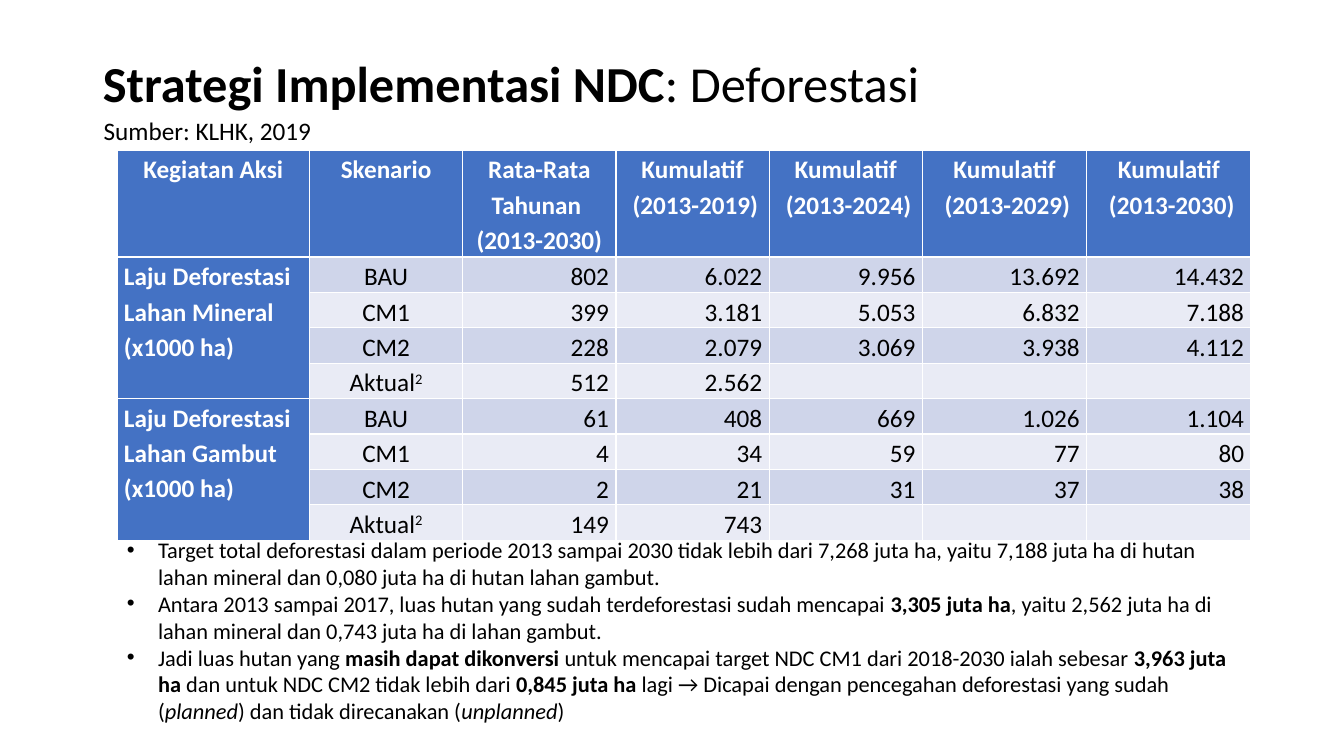
"""Build the slide on deforestation targets of the NDC strategy."""
from dataclasses import dataclass

from lxml.etree import SubElement
from pptx import Presentation
from pptx.dml.color import RGBColor as Rgb
from pptx.enum.text import MSO_ANCHOR as Anchor, MSO_AUTO_SIZE as Fit, PP_ALIGN as Align
from pptx.oxml.ns import qn
from pptx.util import Inches, Pt

FONT = "Calibri"
BLACK = Rgb(0x00, 0x00, 0x00)
WHITE = Rgb(0xFF, 0xFF, 0xFF)
BLUE = Rgb(0x44, 0x72, 0xC4)
DARK = Rgb(0xCF, 0xD5, 0xEA)
LIGHT = Rgb(0xE9, 0xEB, 0xF5)


@dataclass(frozen=True)
class Span:
    text: str
    bold: bool = False
    ital: bool = False
    sup: bool = False


@dataclass(frozen=True)
class Group:
    name: str
    rows: tuple[tuple[str, ...], ...]


WIDTHS = (1.91, 1.52, 1.52, 1.52, 1.52, 1.63, 1.63)
HEAD_H, ROW_H = 1.06, 0.35
CASES = (
    (Span("BAU"),),
    (Span("CM1"),),
    (Span("CM2"),),
    (Span("Aktual"), Span("2", sup=True)),
)
HEADS = ("Kegiatan Aksi", "Skenario", "Rata-Rata Tahunan \v(2013-2030)") + tuple(
    f"Kumulatif\v (2013-{year})" for year in (2019, 2024, 2029, 2030)
)
GROUPS = (
    Group("Laju Deforestasi Lahan Mineral (x1000 ha)", (
        ("802", "6.022", "9.956", "13.692", "14.432"),
        ("399", "3.181", "5.053", "6.832", "7.188"),
        ("228", "2.079", "3.069", "3.938", "4.112"),
        ("512", "2.562", "", "", ""),
    )),
    Group("Laju Deforestasi Lahan Gambut (x1000 ha)", (
        ("61", "408", "669", "1.026", "1.104"),
        ("4", "34", "59", "77", "80"),
        ("2", "21", "31", "37", "38"),
        ("149", "743", "", "", ""),
    )),
)
TITLE = (Span("Strategi Implementasi NDC", bold=True), Span(": Deforestasi"))
NOTES = (
    (
        Span("Target total deforestasi dalam periode 2013 sampai 2030 tidak lebih dari 7,268 juta ha, "
             "yaitu 7,188 juta ha di hutan lahan mineral dan 0,080 juta ha di hutan lahan gambut."),
    ),
    (
        Span("Antara 2013 sampai 2017, luas hutan yang sudah terdeforestasi sudah mencapai "),
        Span("3,305 juta ha", bold=True),
        Span(", yaitu 2,562 juta ha di lahan mineral dan 0,743 juta ha di lahan gambut."),
    ),
    (
        Span("Jadi luas hutan yang "),
        Span("masih dapat dikonversi", bold=True),
        Span(" untuk mencapai target NDC CM1 dari 2018-2030 ialah sebesar "),
        Span("3,963 juta ha ", bold=True),
        Span("dan untuk NDC CM2 tidak lebih dari "),
        Span("0,845 juta ha", bold=True),
        Span(" lagi → Dicapai dengan pencegahan deforestasi yang sudah ("),
        Span("planned", ital=True),
        Span(") dan tidak direcanakan ("),
        Span("unplanned", ital=True),
        Span(")"),
    ),
)


def style(para, size: float, color: Rgb = BLACK, bold: bool = False) -> None:
    """Set the shared font of a paragraph."""
    font = para.font
    font.name, font.size, font.bold = FONT, Pt(size), bold
    font.color.rgb = color


def write(para, spans: tuple[Span, ...]) -> None:
    """Add one run for each span."""
    for span in spans:
        run = para.add_run()
        run.text = span.text
        if span.bold:
            run.font.bold = True
        if span.ital:
            run.font.italic = True
        if span.sup:
            run.font._element.set("baseline", "30000")


def place(shape, left: float, top: float, width: float, height: float) -> None:
    """Move and size a shape."""
    shape.left, shape.top = Inches(left), Inches(top)
    shape.width, shape.height = Inches(width), Inches(height)


def fill(cell, spans: tuple[Span, ...], back: Rgb, align: Align,
         color: Rgb = BLACK, bold: bool = False) -> None:
    """Write and format a table cell."""
    cell.fill.solid()
    cell.fill.fore_color.rgb = back
    cell.margin_left = cell.margin_right = Inches(0.07)
    cell.margin_top = cell.margin_bottom = 0
    para = cell.text_frame.paragraphs[0]
    para.alignment, para.line_spacing = align, 1.15
    style(para, 18, color, bold)
    write(para, spans)


def add_title(slide) -> None:
    """Format the title placeholder."""
    title = slide.shapes.title
    place(title, 0.92, 0.4, 11.5, 0.92)
    frame = title.text_frame
    frame.vertical_anchor, frame.word_wrap = Anchor.MIDDLE, True
    para = frame.paragraphs[0]
    para.alignment, para.line_spacing = Align.LEFT, 0.9
    style(para, 36)
    write(para, TITLE)


def add_rates(slide) -> None:
    """Draw the table of deforestation rates."""
    count = 1 + len(GROUPS) * len(CASES)
    table = slide.shapes.add_table(
        count, len(WIDTHS), Inches(1.16), Inches(1.49),
        Inches(sum(WIDTHS)), Inches(HEAD_H + ROW_H * (count - 1))).table
    for col, width in zip(table.columns, WIDTHS):
        col.width = Inches(width)
    for num, row in enumerate(table.rows):
        row.height = Inches(ROW_H if num else HEAD_H)
    for col, head in enumerate(HEADS):
        cell = table.cell(0, col)
        fill(cell, (), BLUE, Align.CENTER, WHITE, True)
        cell.text_frame.paragraphs[0].text = head
    for index, group in enumerate(GROUPS):
        top = 1 + index * len(CASES)
        name = table.cell(top, 0)
        name.merge(table.cell(top + len(CASES) - 1, 0))
        fill(name, (Span(group.name),), BLUE, Align.LEFT, WHITE, True)
        for num, (case, rates) in enumerate(zip(CASES, group.rows)):
            back = LIGHT if num % 2 else DARK
            fill(table.cell(top + num, 1), case, back, Align.CENTER)
            for col, rate in enumerate(rates, 2):
                spans = (Span(rate),) if rate else ()
                fill(table.cell(top + num, col), spans, back, Align.RIGHT)


def add_notes(slide) -> None:
    """Draw the bulleted notes below the table."""
    box = slide.shapes.add_textbox(Inches(1.16), Inches(5.27), Inches(11.26), Inches(1.99))
    frame = box.text_frame
    frame.word_wrap, frame.auto_size = True, Fit.SHAPE_TO_FIT_TEXT
    for num, spans in enumerate(NOTES):
        para = frame.add_paragraph() if num else frame.paragraphs[0]
        props = para._p.get_or_add_pPr()
        props.set("marL", str(Inches(0.31)))
        props.set("indent", str(-Inches(0.31)))
        SubElement(props, qn("a:buFont"), typeface="Arial")
        SubElement(props, qn("a:buChar"), char="•")
        style(para, 16)
        write(para, spans)


def add_source(slide) -> None:
    """Draw the source line under the title."""
    box = slide.shapes.add_textbox(Inches(0.93), Inches(1.09), Inches(2.29), Inches(0.4))
    frame = box.text_frame
    frame.word_wrap, frame.auto_size = False, Fit.SHAPE_TO_FIT_TEXT
    para = frame.paragraphs[0]
    para.text = "Sumber: KLHK, 2019"
    style(para, 18)


def main() -> None:
    """Build and save the deck."""
    deck = Presentation()
    deck.slide_width, deck.slide_height = Inches(13.33), Inches(7.5)
    slide = deck.slides.add_slide(deck.slide_layouts.get_by_name("Title Only"))
    add_title(slide)
    add_rates(slide)
    add_notes(slide)
    add_source(slide)
    deck.save("out.pptx")


if __name__ == "__main__":
    main()
